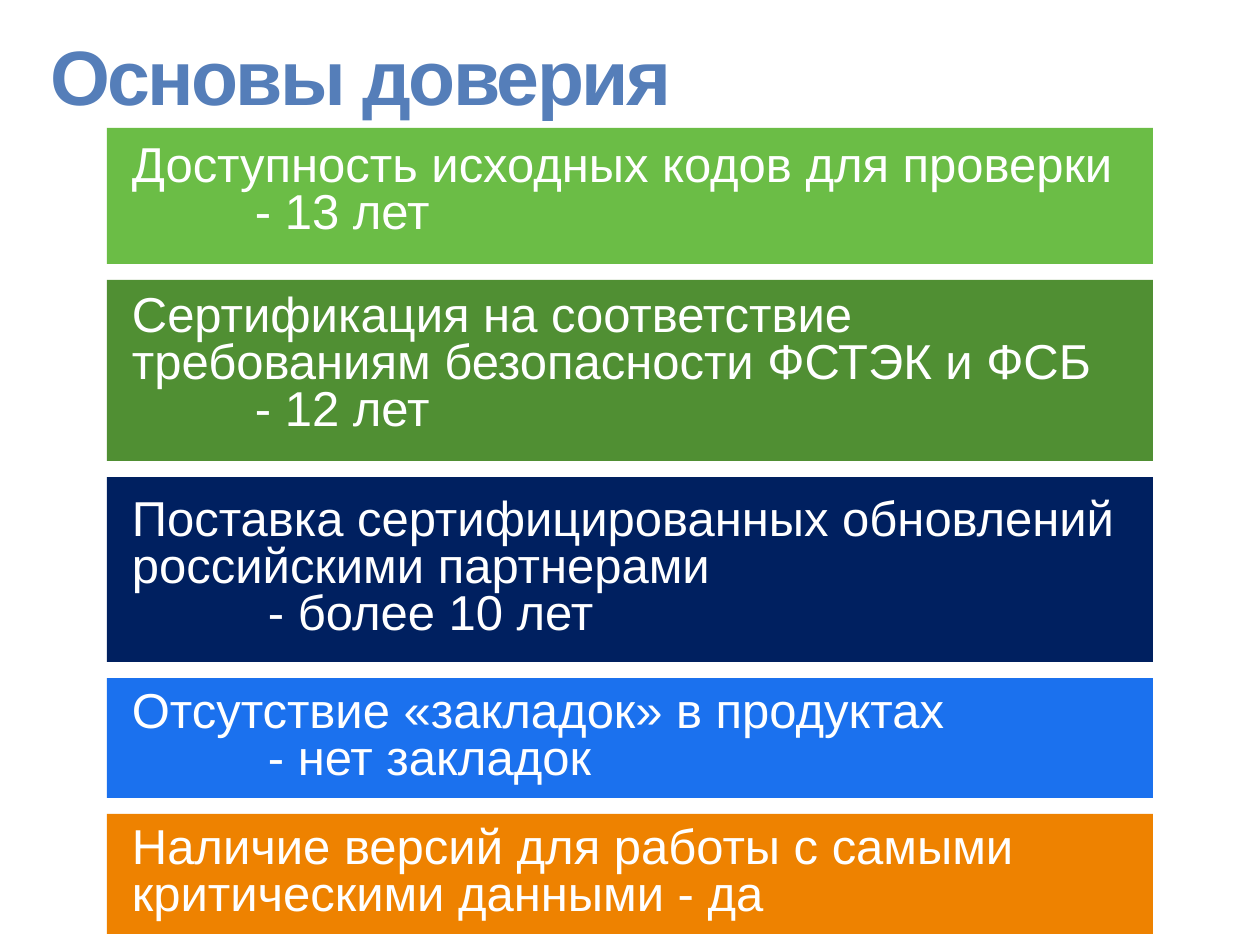
"""Build the slide on the foundations of trust: a title above five coloured bands."""
from typing import NamedTuple

from pptx import Presentation
from pptx import util as u
from pptx.dml.color import RGBColor
from pptx.enum import shapes, text

SCALE = u.Inches(1) / 126
FONT = "Arial"
WHITE = RGBColor(0xFF, 0xFF, 0xFF)
TITLE_BLUE = RGBColor(0x55, 0x7E, 0xB9)
LIGHT_GREEN = RGBColor(0x6B, 0xBD, 0x46)
DARK_GREEN = RGBColor(0x50, 0x8F, 0x33)
NAVY = RGBColor(0x00, 0x20, 0x60)
BRIGHT_BLUE = RGBColor(0x1B, 0x71, 0xEE)
ORANGE = RGBColor(0xEE, 0x82, 0x00)
BAND_LEFT, BAND_TOP, BAND_WIDTH, BAND_GAP, BAND_INSET = 107, 128, 1046, 16, 25
MIDDLE, BOTTOM = text.MSO_ANCHOR.MIDDLE, text.MSO_ANCHOR.BOTTOM


class Band(NamedTuple):
    """A coloured band with a claim and an optional indented answer."""
    height: int
    colour: RGBColor
    anchor: text.MSO_ANCHOR
    claim: str
    answer: str = ""
    indent: int = 0


BANDS = [
    Band(136, LIGHT_GREEN, BOTTOM, "Доступность исходных кодов для проверки", "- 13 лет", 123),
    Band(181, DARK_GREEN, BOTTOM,
         "Сертификация на соответствие требованиям безопасности ФСТЭК и ФСБ", "- 12 лет", 123),
    Band(185, NAVY, MIDDLE,
         "Поставка сертифицированных обновлений российскими партнерами", "- более 10 лет", 136),
    Band(120, BRIGHT_BLUE, MIDDLE, "Отсутствие «закладок» в продуктах", "- нет закладок", 136),
    Band(120, ORANGE, MIDDLE, "Наличие версий для работы с самыми критическими данными - да"),
]


def px(length: int) -> u.Emu:
    """Turn pixels into EMU."""
    return u.Emu(round(length * SCALE))


def set_frame(frame, anchor: text.MSO_ANCHOR, inset: int) -> None:
    """Set wrapping, anchor and equal margins of a text frame."""
    frame.word_wrap = True
    frame.auto_size = text.MSO_AUTO_SIZE.NONE
    frame.vertical_anchor = anchor
    frame.margin_left = frame.margin_right = px(inset)
    frame.margin_top = frame.margin_bottom = px(inset)


def write(para, words: str, *, size: int, colour: RGBColor, spacing: float,
          bold: bool = False, tracking: float = 0, indent: int = 0) -> None:
    """Write one formatted, left-aligned paragraph."""
    para.alignment = text.PP_ALIGN.LEFT
    para.line_spacing = spacing
    para.space_before = para.space_after = u.Pt(0)
    if indent:
        para._p.get_or_add_pPr().set("marL", str(px(indent)))
    span = para.add_run()
    span.text = words
    span.font.name = FONT
    span.font.size = u.Pt(size)
    span.font.bold = bold
    span.font.color.rgb = colour
    if tracking:
        span.font._element.set("spc", str(round(tracking * 100)))


def draw_title(page, words: str) -> None:
    """Place and fill the title placeholder."""
    box = page.shapes.title
    box.left, box.top, box.width, box.height = map(px, (50, 34, 1186, 94))
    set_frame(box.text_frame, MIDDLE, 0)
    write(box.text_frame.paragraphs[0], words, size=44, colour=TITLE_BLUE,
          spacing=0.9, bold=True, tracking=-1.5)


def draw_band(page, band: Band, top: int) -> None:
    """Draw one band with its text."""
    box = page.shapes.add_shape(shapes.MSO_SHAPE.RECTANGLE, px(BAND_LEFT), px(top),
                                px(BAND_WIDTH), px(band.height))
    box.shadow.inherit = False
    box.fill.solid()
    box.fill.fore_color.rgb = band.colour
    box.line.fill.background()
    frame = box.text_frame
    set_frame(frame, band.anchor, BAND_INSET)
    write(frame.paragraphs[0], band.claim, size=28, colour=WHITE, spacing=0.8)
    if band.answer:
        write(frame.add_paragraph(), band.answer, size=28, colour=WHITE,
              spacing=0.8, indent=band.indent)


def main() -> None:
    """Build and save the deck."""
    deck = Presentation()
    deck.slide_width, deck.slide_height = px(1260), px(945)
    page = deck.slides.add_slide(deck.slide_layouts[5])
    draw_title(page, "Основы доверия")
    top = BAND_TOP
    for band in BANDS:
        draw_band(page, band, top)
        top += band.height + BAND_GAP
    deck.save("out.pptx")


if __name__ == "__main__":
    main()
